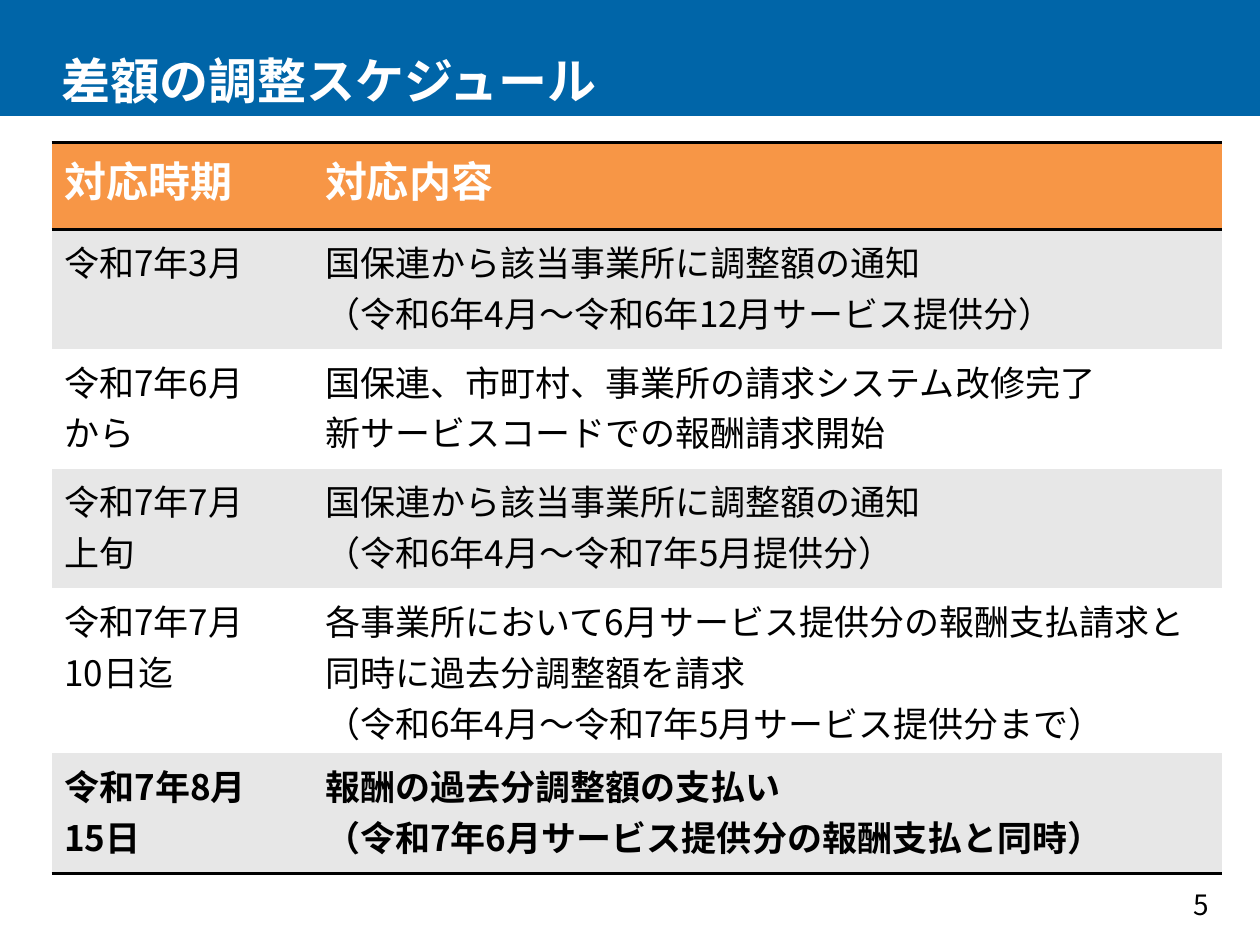
from lxml import etree
from pptx import Presentation
from pptx import util as u
from pptx.dml.color import RGBColor
from pptx.enum import shapes, text
from pptx.oxml.ns import qn

FONT = "Noto Sans CJK JP"
BLACK, WHITE, BLUE, ORANGE, GRAY = "000000", "FFFFFF", "0065A8", "F79646", "E7E7E7"
PLAIN_TABLE_STYLE = "{2D5ABB26-0587-4C30-8999-92F81FD0307C}"
ROW_HEIGHTS = [0.69, 0.95, 0.95, 0.95, 1.31, 0.95]
SCHEDULE = [
    ("対応時期", "対応内容"),
    ("令和7年3月", "国保連から該当事業所に調整額の通知\n（令和6年4月～令和6年12月サービス提供分）"),
    ("令和7年6月\nから", "国保連、市町村、事業所の請求システム改修完了\n新サービスコードでの報酬請求開始"),
    ("令和7年7月\n上旬", "国保連から該当事業所に調整額の通知\n（令和6年4月～令和7年5月提供分）"),
    ("令和7年7月\n10日迄", "各事業所において6月サービス提供分の報酬支払請求と同時に過去分調整額を請求\n"
                      "（令和6年4月～令和7年5月サービス提供分まで）"),
    ("令和7年8月\n15日", "報酬の過去分調整額の支払い\n（令和7年6月サービス提供分の報酬支払と同時）"),
]


def paint(color_format, color):
    color_format.rgb = RGBColor.from_string(color)


def fill_solid(target, color):
    target.fill.solid()
    paint(target.fill.fore_color, color)


def write_text(frame, content, size=20, color=BLACK, bold=False, align=text.PP_ALIGN.LEFT):
    frame.word_wrap = True
    for index, line in enumerate(content.split("\n")):
        paragraph = frame.paragraphs[0] if index == 0 else frame.add_paragraph()
        paragraph.alignment = align
        run = paragraph.add_run()
        run.text = line
        run.font.size = u.Pt(size)
        run.font.bold = bold
        run.font.name = FONT
        paint(run.font.color, color)
        etree.SubElement(run.font._element, qn("a:ea"), typeface=FONT)


def add_border(cell, position, side, width=2):
    line = etree.Element(qn(f"a:{side}"), w=str(u.Pt(width)))
    fill = etree.SubElement(line, qn("a:solidFill"))
    etree.SubElement(fill, qn("a:srgbClr"), val=BLACK)
    cell._tc.get_or_add_tcPr().insert(position, line)


def add_title_band(slide, left, top, width, height):
    band = slide.shapes.add_shape(shapes.MSO_SHAPE.RECTANGLE, left, top, width, height)
    band.shadow.inherit = False
    fill_solid(band, BLUE)
    band.line.fill.background()
    title = slide.shapes.add_textbox(left, top, width, height)
    title.text_frame.margin_left = u.Inches(0.49)
    title.text_frame.vertical_anchor = text.MSO_ANCHOR.BOTTOM
    write_text(title.text_frame, "差額の調整スケジュール", size=28, color=WHITE, bold=True)


def add_schedule(slide, left, top, width, height):
    table = slide.shapes.add_table(len(SCHEDULE), 2, left, top, width, height).table
    table._tbl.tblPr.find(qn("a:tableStyleId")).text = PLAIN_TABLE_STYLE
    table.horz_banding = False
    table.columns[0].width = u.Inches(2.07)
    table.columns[1].width = width - u.Inches(2.07)
    last = len(SCHEDULE) - 1
    for row_index, (entries, row_height) in enumerate(zip(SCHEDULE, ROW_HEIGHTS)):
        header = row_index == 0
        table.rows[row_index].height = u.Inches(row_height)
        for column_index, entry in enumerate(entries):
            cell = table.cell(row_index, column_index)
            fill_solid(cell, ORANGE if header else GRAY if row_index % 2 else WHITE)
            write_text(cell.text_frame, entry, size=24 if header else 20,
                       color=WHITE if header else BLACK, bold=row_index in (0, last))
            if row_index in (0, last):
                add_border(cell, 0, "lnB")
            if header:
                add_border(cell, 0, "lnT")


def add_page_number(slide, left, top, width, height):
    frame = slide.shapes.add_textbox(left, top, width, height).text_frame
    frame.vertical_anchor = text.MSO_ANCHOR.MIDDLE
    write_text(frame, "5", size=16, align=text.PP_ALIGN.RIGHT)


def main():
    presentation = Presentation()
    presentation.slide_width = u.Inches(10)
    presentation.slide_height = u.Inches(7.5)
    slide = presentation.slides.add_slide(presentation.slide_layouts[6])
    add_title_band(slide, 0, 0, u.Inches(10), u.Inches(0.92))
    add_page_number(slide, u.Inches(7.36), u.Inches(6.98), u.Inches(2.33), u.Inches(0.39))
    add_schedule(slide, u.Inches(0.41), u.Inches(1.13), u.Inches(9.29), u.Inches(sum(ROW_HEIGHTS)))
    presentation.save("out.pptx")


if __name__ == "__main__":
    main()
